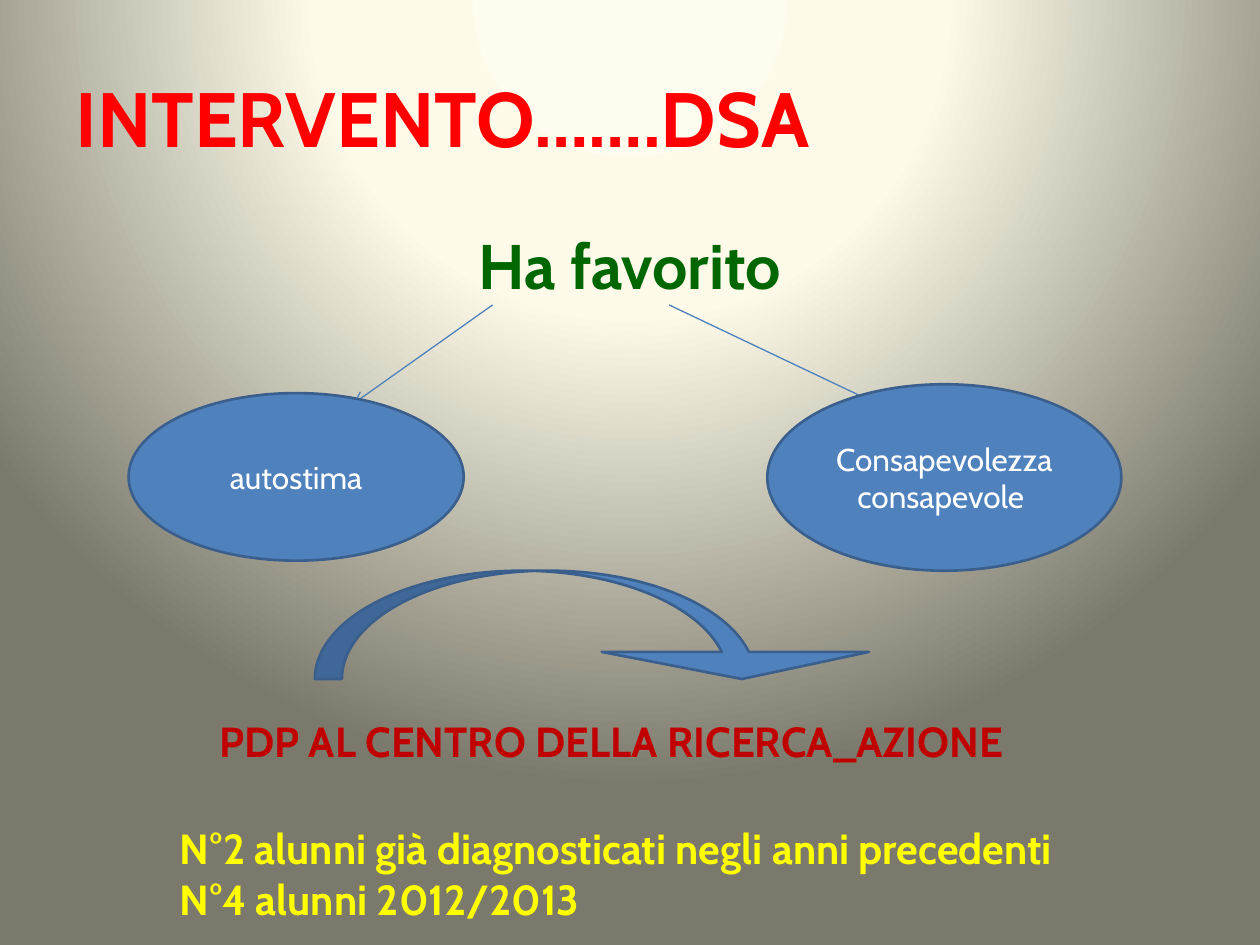
from dataclasses import dataclass

from lxml import etree
from pptx import Presentation, util as u
from pptx.dml.color import RGBColor
from pptx.enum import shapes, text
from pptx.oxml import ns, parse_xml

FONT = "Cabin"
RED = RGBColor(0xFF, 0x00, 0x00)
GREEN = RGBColor(0x00, 0x66, 0x00)
CRIMSON = RGBColor(0xC0, 0x00, 0x00)
YELLOW = RGBColor(0xFF, 0xFF, 0x00)
WHITE = RGBColor(0xFF, 0xFF, 0xFF)
BLUE = RGBColor(0x4F, 0x81, 0xBD)
DARK_BLUE = RGBColor(0x3A, 0x5F, 0x8C)
GLOW = [(0, RGBColor(0xFE, 0xFC, 0xEE)), (40, RGBColor(0xFD, 0xFA, 0xEA)),
        (100, RGBColor(0x7B, 0x79, 0x6B))]


@dataclass
class Box:
    """A region whose inner boxes are given in percent of its size."""
    left: float
    top: float
    width: float
    height: float

    def point(self, x, y):
        """Return the point at the given shares of the region."""
        return (u.Emu(int(self.left + self.width * x / 100)),
                u.Emu(int(self.top + self.height * y / 100)))

    def inner(self, x, y, width, height):
        """Return the sub-region at the given shares of the region."""
        return Box(*self.point(x, y), int(self.width * width / 100),
                   int(self.height * height / 100))

    def bounds(self):
        """Return the region as shape arguments."""
        return self.left, self.top, self.width, self.height


def paint_background(slide):
    """Fill the background with a circular glow from above."""
    slide.background.fill.solid()
    stops = "".join(f'<a:gs pos="{share * 1000}"><a:srgbClr val="{color}"/></a:gs>'
                    for share, color in GLOW)
    glow = parse_xml(
        f'<a:gradFill {ns.nsdecls("a")} rotWithShape="1"><a:gsLst>{stops}</a:gsLst>'
        '<a:path path="circle"><a:fillToRect l="50000" t="-80000" r="50000" b="180000"/>'
        '</a:path></a:gradFill>')
    plain = slide.element.find(".//" + ns.qn("p:bgPr")).find(ns.qn("a:solidFill"))
    plain.getparent().replace(plain, glow)


def write(frame, wording, size, color, bold=True, align=text.PP_ALIGN.LEFT):
    """Put formatted wording into a text frame."""
    frame.text = wording
    frame.word_wrap = True
    for paragraph in frame.paragraphs:
        paragraph.alignment = align
        for run in paragraph.runs:
            run.font.name = FONT
            run.font.size = u.Pt(size)
            run.font.bold = bold
            run.font.color.rgb = color


def add_text(slide, box, wording, size, color, **style):
    """Add a text box and return its frame."""
    frame = slide.shapes.add_textbox(*box.bounds()).text_frame
    write(frame, wording, size, color, **style)
    return frame


def add_blue_shape(slide, kind, box):
    """Add a blue outlined shape."""
    shape = slide.shapes.add_shape(kind, *box.bounds())
    shape.shadow.inherit = False
    shape.fill.solid()
    shape.fill.fore_color.rgb = BLUE
    shape.line.color.rgb = DARK_BLUE
    shape.line.width = u.Pt(1.5)
    return shape


def add_arrow(slide, start, end):
    """Add a thin line with an arrowhead at its end."""
    arrow = slide.shapes.add_connector(shapes.MSO_CONNECTOR.STRAIGHT, *start, *end)
    arrow.line.color.rgb = BLUE
    arrow.line.width = u.Pt(0.75)
    properties = arrow.element.spPr
    line = properties.find(ns.qn("a:ln"))
    etree.SubElement(line, ns.qn("a:tailEnd"), type="arrow")
    etree.SubElement(properties, ns.qn("a:effectLst"))


def add_title(slide, box):
    """Place the slide title."""
    frame = add_text(slide, box, "INTERVENTO…….DSA", 44, RED)
    frame.vertical_anchor = text.MSO_ANCHOR.MIDDLE


def add_benefits(slide, box):
    """Place the heading, its two benefits and the curved arrow."""
    heading = add_text(slide, box, "Ha favorito", 36, GREEN, align=text.PP_ALIGN.CENTER)
    heading.paragraphs[0].space_before = u.Pt(7.2)
    for start_x, end_x in ((37.89, 25.67), (53.44, 71.67)):
        add_arrow(slide, box.point(start_x, 13.54), box.point(end_x, 29.29))
    benefits = (("Consapevolezza\nconsapevole ", (62.11, 26.26, 31.22, 29.9)),
                ("autostima", (5.78, 27.68, 29.56, 26.87)))
    for wording, place in benefits:
        benefit = add_blue_shape(slide, shapes.MSO_SHAPE.OVAL, box.inner(*place))
        write(benefit.text_frame, wording, 18, WHITE, False, text.PP_ALIGN.CENTER)
        benefit.text_frame.vertical_anchor = text.MSO_ANCHOR.MIDDLE
    curve = add_blue_shape(slide, shapes.MSO_SHAPE.CURVED_DOWN_ARROW,
                           box.inner(22.22, 56.16, 49.44, 17.37))
    curve.adjustments[1] = 2.467


def add_conclusion(slide, box):
    """Place the conclusion and the pupil counts."""
    add_text(slide, box.inner(3.88, 0, 86.13, 28.41),
             "PDP AL CENTRO DELLA RICERCA_AZIONE", 24, CRIMSON)
    add_text(slide, box.inner(0, 48.3, 100, 51.7),
             "N°2 alunni già diagnosticati negli anni precedenti\nN°4 alunni 2012/2013",
             24, YELLOW)


def main():
    """Build and save the presentation."""
    deck = Presentation()
    deck.slide_width, deck.slide_height = u.Inches(10), u.Inches(7.5)
    slide = deck.slides.add_slide(deck.slide_layouts[6])
    page = Box(0, 0, deck.slide_width, deck.slide_height)
    paint_background(slide)
    add_title(slide, page.inner(5, 4, 90, 16.67))
    add_benefits(slide, page.inner(5, 23.33, 90, 66))
    add_conclusion(slide, page.inner(13.3, 75.07, 80, 23.47))
    deck.save("out.pptx")


if __name__ == "__main__":
    main()
